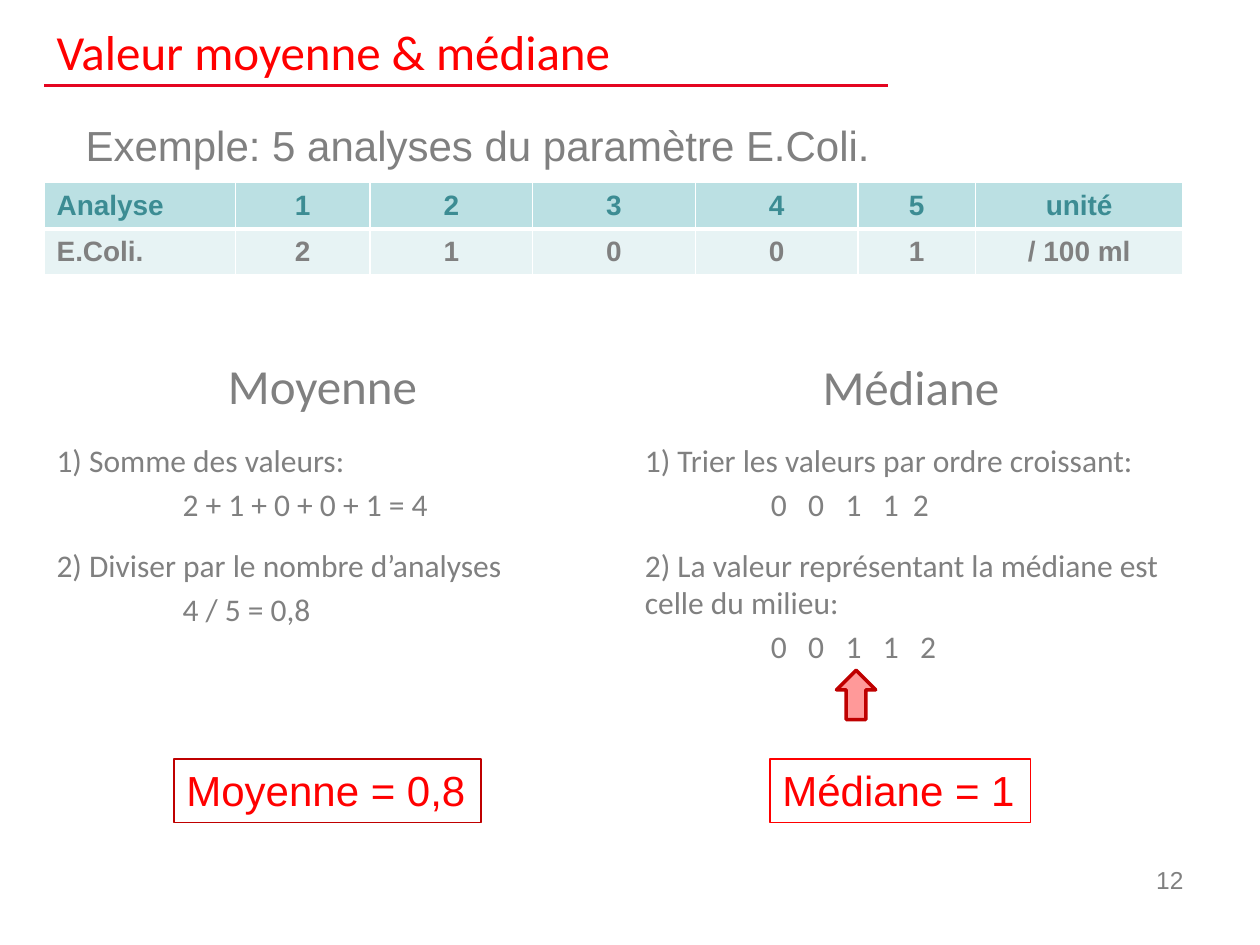
from lxml import etree
from pptx import Presentation
from pptx.dml.color import RGBColor
from pptx.enum.shapes import MSO_CONNECTOR, MSO_SHAPE
from pptx.enum.text import MSO_ANCHOR, PP_ALIGN
from pptx.oxml.ns import qn
from pptx.util import Pt

LEFT, CENTER, RIGHT = PP_ALIGN.LEFT, PP_ALIGN.CENTER, PP_ALIGN.RIGHT
TOP, MIDDLE = MSO_ANCHOR.TOP, MSO_ANCHOR.MIDDLE
STRAIGHT = MSO_CONNECTOR.STRAIGHT
RECTANGLE, UP_ARROW = MSO_SHAPE.RECTANGLE, MSO_SHAPE.UP_ARROW

COLORS = {
    "red": "FF0000", "rule": "E40520", "dark_red": "BF0000", "pink": "FF9999",
    "gray": "808080", "teal": "3C8C93", "header": "BBE0E3", "body": "E7F3F4",
    "white": "FFFFFF",
}
LEFT_COLUMN, RIGHT_COLUMN, COLUMN_WIDTH = 25.2, 361.4, 318.2
TABLE_ROWS = [
    ["Analyse", "1", "2", "3", "4", "5", "unité"],
    ["E.Coli.", "2", "1", "0", "0", "1", "/ 100 ml"],
]
COLUMN_WIDTHS = [109.4, 76.8, 93, 93, 93, 67, 118.8]
ROW_HEIGHT = 26.2


def color(name):
    return RGBColor.from_string(COLORS[name])


def style(paragraph, size, font_name, color_name, align=LEFT, bold=False):
    paragraph.alignment = align
    font = paragraph.font
    font.size, font.name, font.bold = Pt(size), font_name, bold
    font.color.rgb = color(color_name)


def add_tab_stops(paragraph, positions):
    tab_list = etree.SubElement(paragraph._p.get_or_add_pPr(), qn("a:tabLst"))
    for position in positions:
        etree.SubElement(tab_list, qn("a:tab"), pos=str(Pt(position)), algn="l")


def add_text(slide, box, lines, size, font_name, color_name, align=LEFT,
             anchor=TOP, wrap=True, tabs=()):
    shape = slide.shapes.add_textbox(*map(Pt, box))
    frame = shape.text_frame
    frame.word_wrap, frame.vertical_anchor = wrap, anchor
    for index, line in enumerate(lines):
        paragraph = frame.paragraphs[0] if index == 0 else frame.add_paragraph()
        paragraph.text = line
        if index:
            paragraph.space_before = Pt(size * 0.2)
        if tabs and "\t" in line:
            add_tab_stops(paragraph, tabs)
        style(paragraph, size, font_name, color_name, align)


def add_step(slide, left, top, height, lines, tabs=(72,)):
    add_text(slide, (left, top, COLUMN_WIDTH, height), lines, 18, "Calibri",
             "gray", tabs=tabs)


def add_heading(slide, left, top, text):
    add_text(slide, (left, top, COLUMN_WIDTH, 51), [text], 28, "Calibri",
             "gray", CENTER)


def add_shape(slide, preset, box, line_name, line_width, fill_name=None):
    shape = slide.shapes.add_shape(preset, *map(Pt, box))
    shape.shadow.inherit = False
    if fill_name:
        shape.fill.solid()
        shape.fill.fore_color.rgb = color(fill_name)
    else:
        shape.fill.background()
    shape.line.color.rgb = color(line_name)
    shape.line.width = Pt(line_width)
    return shape


def add_result(slide, left, width, text, line_name):
    shape = add_shape(slide, RECTANGLE, (left, 433.6, width, 36.4), line_name, 1)
    frame = shape.text_frame
    frame.word_wrap, frame.vertical_anchor = False, TOP
    frame.text = text
    style(frame.paragraphs[0], 24, "Arial", "red")


def add_rule(slide, left, right, top):
    rule = slide.shapes.add_connector(STRAIGHT, Pt(left), Pt(top), Pt(right), Pt(top))
    rule.line.color.rgb = color("rule")
    rule.line.width = Pt(1.5)
    etree.SubElement(rule._element.spPr, qn("a:effectLst"))


def set_border(cell, side, width):
    """Draw one white cell border; side is L, R, T or B."""
    properties = cell._tc.get_or_add_tcPr()
    line = etree.SubElement(properties, qn(f"a:ln{side}"), w=str(Pt(width)))
    fill = etree.SubElement(line, qn("a:solidFill"))
    etree.SubElement(fill, qn("a:srgbClr"), val=COLORS["white"])


def add_analysis_table(slide):
    table = slide.shapes.add_table(
        len(TABLE_ROWS), len(COLUMN_WIDTHS), Pt(25.2), Pt(104.4),
        Pt(sum(COLUMN_WIDTHS)), Pt(ROW_HEIGHT * len(TABLE_ROWS))).table
    for column, width in zip(table.columns, COLUMN_WIDTHS):
        column.width = Pt(width)
    row_colors = [("header", "teal"), ("body", "gray")]
    for row, (texts, (fill_name, text_name)) in enumerate(zip(TABLE_ROWS, row_colors)):
        table.rows[row].height = Pt(ROW_HEIGHT)
        for column, text in enumerate(texts):
            cell = table.cell(row, column)
            cell.text = text
            cell.vertical_anchor = MIDDLE
            style(cell.text_frame.paragraphs[0], 16, "Arial", text_name,
                  CENTER if column else LEFT, bold=True)
            widths = {"L": 1, "R": 1, "T": 3 if row else 1, "B": 1 if row else 3}
            for side, width in widths.items():
                set_border(cell, side, width)
            cell.fill.solid()
            cell.fill.fore_color.rgb = color(fill_name)


def main():
    presentation = Presentation()
    presentation.slide_width, presentation.slide_height = Pt(720), Pt(540)
    slide = presentation.slides.add_slide(presentation.slide_layouts[6])

    add_rule(slide, 25.2, 507.6, 49)
    add_text(slide, (25.2, 9.4, 481.7, 39.6), ["Valeur moyenne & médiane"],
             28, "Calibri", "red", anchor=MIDDLE)
    add_text(slide, (632.2, 491, 51.1, 39.6), ["12"], 14, "Arial", "gray", RIGHT)
    add_text(slide, (41.8, 64.8, 467.3, 36.4),
             ["Exemple: 5 analyses du paramètre E.Coli."],
             24, "Arial", "gray", wrap=False)
    add_analysis_table(slide)

    add_heading(slide, LEFT_COLUMN, 199.4, "Moyenne")
    add_step(slide, LEFT_COLUMN, 248.4, 62.6,
             ["1) Somme des valeurs:", "\t2 + 1 + 0 + 0 + 1 = 4"])
    add_step(slide, LEFT_COLUMN, 308.2, 81.4,
             ["2) Diviser par le nombre d’analyses", "\t4 / 5 = 0,8"])
    add_result(slide, 99.4, 175.7, "Moyenne = 0,8", "dark_red")

    add_heading(slide, RIGHT_COLUMN, 200, "Médiane")
    add_step(slide, RIGHT_COLUMN, 248.4, 62.6,
             ["1) Trier les valeurs par ordre croissant:", "\t0\t0\t1\t1\t2"],
             (72, 93.3, 114.7, 136, 153.2))
    add_step(slide, RIGHT_COLUMN, 308.2, 81.4,
             ["2) La valeur représentant la médiane est celle du milieu:",
              "\t0\t0\t1\t1\t2"],
             (72, 93.3, 114.7, 136, 157.3))
    add_shape(slide, UP_ARROW, (478, 383, 22.4, 28.2), "dark_red", 2, "pink")
    add_result(slide, 440, 149, "Médiane = 1", "red")

    presentation.save("out.pptx")


if __name__ == "__main__":
    main()
